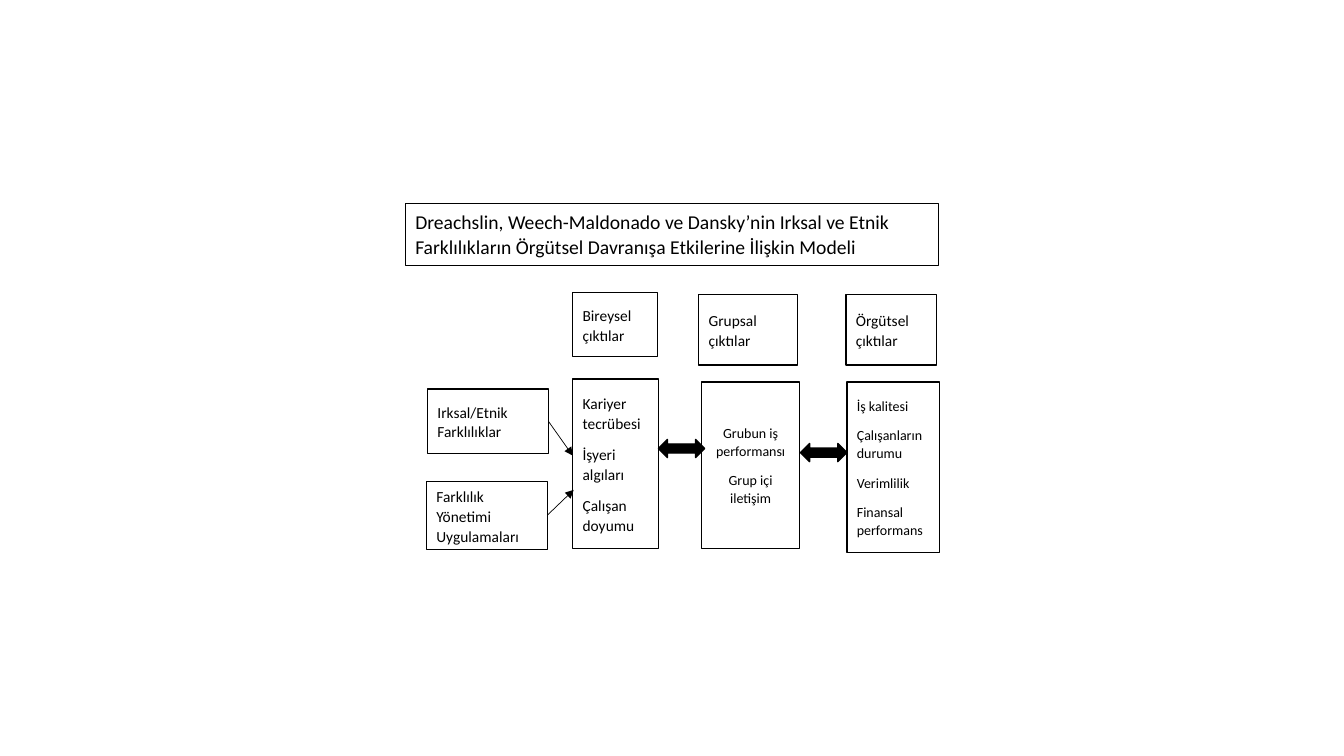
from dataclasses import dataclass

from lxml.etree import SubElement
from pptx import Presentation
from pptx.dml.color import RGBColor
from pptx.enum.shapes import MSO_CONNECTOR, MSO_SHAPE
from pptx.enum.text import MSO_ANCHOR, PP_ALIGN
from pptx.oxml.ns import qn
from pptx.shapes.autoshape import Shape
from pptx.slide import Slide
from pptx.util import Inches, Pt


@dataclass(frozen=True)
class Theme:
    font: str = "Calibri"
    ink: RGBColor = RGBColor(0, 0, 0)
    paper: RGBColor = RGBColor(255, 255, 255)
    title: float = 14
    body: float = 11
    small: float = 10
    thin: float = 0.5
    thick: float = 1
    lead: float = 1.07
    gap: float = 8


THEME = Theme()


@dataclass(frozen=True)
class Box:
    left: float
    top: float
    width: float
    height: float
    lines: tuple[str, ...]
    size: float = THEME.body
    line: float = THEME.thick
    gap: float = THEME.gap
    align: PP_ALIGN = PP_ALIGN.LEFT
    anchor: MSO_ANCHOR = MSO_ANCHOR.MIDDLE


@dataclass(frozen=True)
class Link:
    start: tuple[float, float]
    end: tuple[float, float]


TITLE = Box(4.02, 2.02, 5.29, 0.61, (
    "Dreachslin, Weech-Maldonado ve Dansky’nin Irksal ve Etnik "
    "Farklılıkların Örgütsel Davranışa Etkilerine İlişkin Modeli",),
    THEME.title, THEME.thin, anchor=MSO_ANCHOR.TOP)

CAUSES = (
    Box(4.24, 3.86, 1.2, 0.64, ("Irksal/Etnik Farklılıklar",)),
    Box(4.23, 4.78, 1.2, 0.67, ("Farklılık Yönetimi Uygulamaları",), gap=0),
)
HEADS = (
    Box(5.68, 2.9, 0.84, 0.64, ("Bireysel çıktılar",)),
    Box(6.93, 2.92, 0.98, 0.7, ("Grupsal çıktılar",)),
    Box(8.39, 2.92, 0.9, 0.7, ("Örgütsel çıktılar",)),
)
RESULTS = (
    Box(5.68, 3.76, 0.85, 1.68,
        ("Kariyer tecrübesi", "İşyeri algıları", "Çalışan doyumu")),
    Box(6.96, 3.79, 0.97, 1.65,
        ("Grubun iş performansı", "Grup içi iletişim"),
        THEME.small, align=PP_ALIGN.CENTER),
    Box(8.4, 3.79, 0.92, 1.69,
        ("İş kalitesi", "Çalışanların durumu", "Verimlilik",
         "Finansal performans"), THEME.small),
)
ARROWS = ((6.53, 4.36), (7.94, 4.4))
LINKS = (
    Link((5.44, 4.18), (5.68, 4.52)),
    Link((5.43, 5.11), (5.69, 4.86)),
)


def add_form(slide: Slide, kind: MSO_SHAPE, left: float, top: float,
             width: float, height: float, fill: RGBColor,
             line: float) -> Shape:
    form = slide.shapes.add_shape(
        kind, Inches(left), Inches(top), Inches(width), Inches(height))
    form.shadow.inherit = False
    form.fill.solid()
    form.fill.fore_color.rgb = fill
    form.line.color.rgb = THEME.ink
    form.line.width = Pt(line)
    return form


def add_box(slide: Slide, box: Box) -> None:
    form = add_form(slide, MSO_SHAPE.RECTANGLE, box.left, box.top,
                    box.width, box.height, THEME.paper, box.line)
    frame = form.text_frame
    frame.word_wrap = True
    frame.vertical_anchor = box.anchor
    for num, text in enumerate(box.lines):
        para = frame.add_paragraph() if num else frame.paragraphs[0]
        para.text = text
        para.alignment = box.align
        para.line_spacing = THEME.lead
        para.space_after = Pt(box.gap)
        para.font.name = THEME.font
        para.font.size = Pt(box.size)
        para.font.color.rgb = THEME.ink


def add_link(slide: Slide, link: Link) -> None:
    ends = [Inches(value) for value in link.start + link.end]
    wire = slide.shapes.add_connector(MSO_CONNECTOR.STRAIGHT, *ends)
    wire.line.color.rgb = THEME.ink
    wire.line.width = Pt(THEME.thin)
    # Arrowhead at the end, no shadow
    SubElement(wire.line._get_or_add_ln(), qn("a:tailEnd"), type="triangle")
    SubElement(wire._element.spPr, qn("a:effectLst"))


def main() -> None:
    deck = Presentation()
    deck.slide_width = Inches(13.33)
    deck.slide_height = Inches(7.5)
    slide = deck.slides.add_slide(deck.slide_layouts[6])

    # Title, causes and outcome columns
    for box in (TITLE, *CAUSES, *HEADS, *RESULTS):
        add_box(slide, box)

    # Two-way arrows between the outcomes
    for left, top in ARROWS:
        add_form(slide, MSO_SHAPE.LEFT_RIGHT_ARROW, left, top, 0.46, 0.18,
                 THEME.ink, THEME.thick)

    # Lines from the causes to the first outcome
    for link in LINKS:
        add_link(slide, link)

    deck.save("out.pptx")


if __name__ == "__main__":
    main()
